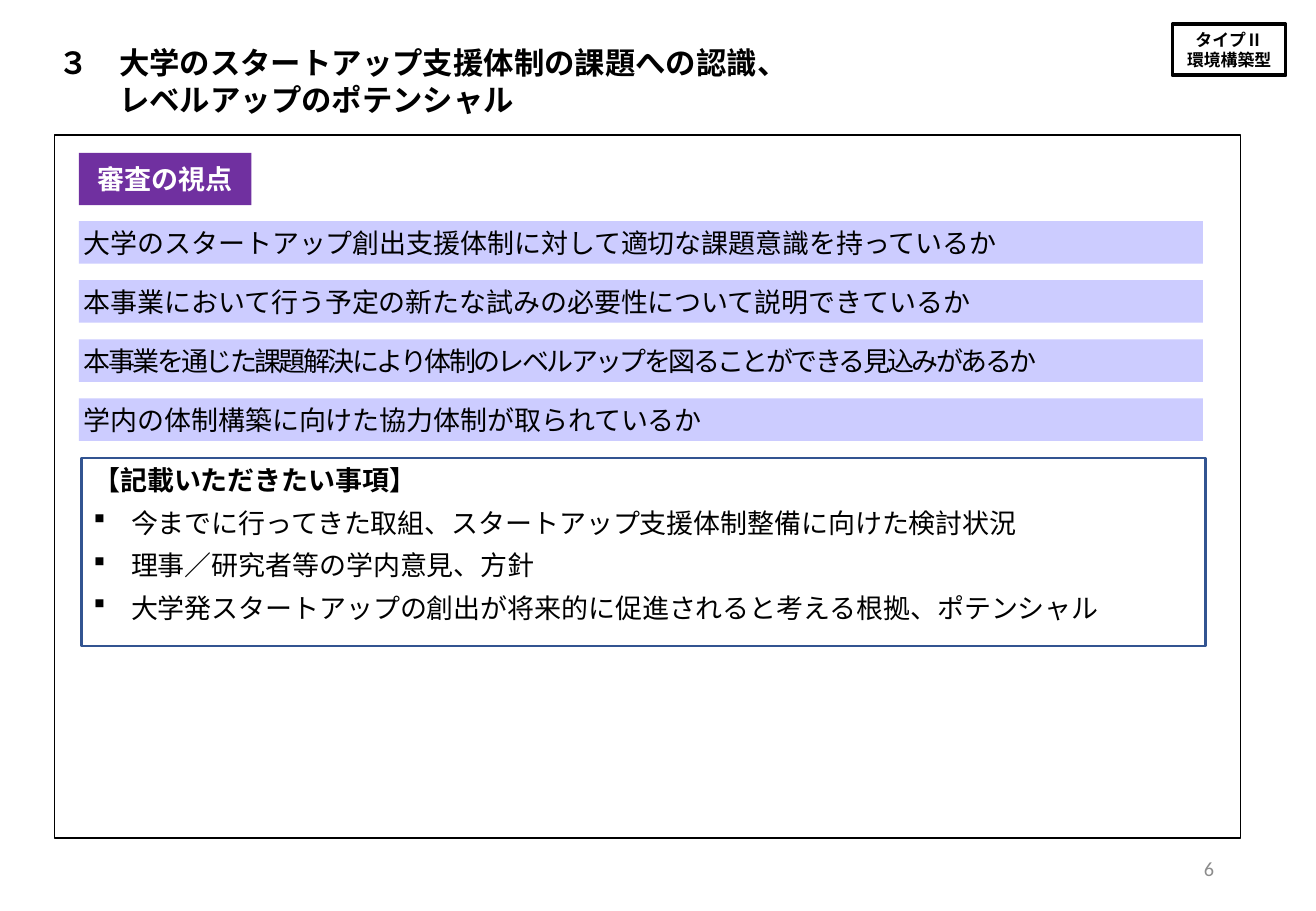
from lxml import etree
from pptx import Presentation, util as u
from pptx.dml.color import RGBColor
from pptx.enum import shapes, text
from pptx.oxml.ns import qn

BLACK = RGBColor(0, 0, 0)
WHITE = RGBColor(255, 255, 255)
PURPLE = RGBColor(0x70, 0x30, 0xA0)
LAVENDER = RGBColor(0xCC, 0xCC, 0xFF)
NAVY = RGBColor(0x32, 0x54, 0x91)
GRAY = RGBColor(0x8C, 0x8C, 0x8C)
LEFT, CENTER, RIGHT = text.PP_ALIGN.LEFT, text.PP_ALIGN.CENTER, text.PP_ALIGN.RIGHT
MIDDLE, TOP = text.MSO_ANCHOR.MIDDLE, text.MSO_ANCHOR.TOP


def add_rect(s, box, fill=None, line=None, width=1):
    sp = s.shapes.add_shape(shapes.MSO_SHAPE.RECTANGLE, *map(u.Inches, box))
    sp.shadow.inherit = False
    if fill is None:
        sp.fill.background()
    else:
        sp.fill.solid()
        sp.fill.fore_color.rgb = fill
    if line is None:
        sp.line.fill.background()
    else:
        sp.line.color.rgb = line
        sp.line.width = u.Pt(width)
    return sp


def add_textbox(s, box):
    return s.shapes.add_textbox(*map(u.Inches, box))


def set_frame(sp, anchor=MIDDLE, inset=0.04, side=None):
    tf = sp.text_frame
    tf.word_wrap = True
    tf.vertical_anchor = anchor
    tf.margin_top = tf.margin_bottom = u.Inches(inset)
    tf.margin_left = tf.margin_right = u.Inches(inset if side is None else side)
    return tf


def write(tf, words, size=16, font="Calibri", east="Calibri", color=BLACK, bold=False,
          align=LEFT, before=0, left=0, hang=0, bullet=None, spacing=None):
    p = tf.paragraphs[0]
    if p.runs:
        p = tf.add_paragraph()
    p.alignment = align
    p.space_before = u.Pt(before)
    pPr = p._p.get_or_add_pPr()
    pPr.set("marL", str(u.Inches(left)))
    pPr.set("indent", str(u.Inches(-hang)))
    if bullet:
        etree.SubElement(pPr, qn("a:buFont"), typeface="Wingdings")
        etree.SubElement(pPr, qn("a:buChar"), char=bullet)
    r = p.add_run()
    r.text = words
    r.font.size = u.Pt(size)
    r.font.bold = bold
    r.font.color.rgb = color
    r.font.name = font
    rPr = r._r.get_or_add_rPr()
    etree.SubElement(rPr, qn("a:ea"), typeface=east)
    if spacing:
        rPr.set("spc", str(int(spacing * 100)))


def type_tag(s, box):
    tf = set_frame(add_rect(s, box, line=BLACK, width=2.25))
    for words in ("タイプⅡ", "環境構築型"):
        write(tf, words, size=10, font="Arial", bold=True, align=CENTER)


def title(s, box):
    tf = set_frame(add_textbox(s, box))
    write(tf, "３　大学のスタートアップ支援体制の課題への認識、", size=18, bold=True)
    write(tf, "レベルアップのポテンシャル", size=18, bold=True, left=0.5)


def criteria(s, box):
    x, y, w, h = box
    tf = set_frame(add_rect(s, (x, y, 1.42, 0.43), PURPLE))
    write(tf, "審査の視点", font="Arial", color=WHITE, bold=True, align=CENTER)
    bar, first = 0.35, 0.56
    pitch = (h - first - bar) / 3
    bars = [
        ("大学のスタートアップ創出支援体制に対して適切な課題意識を持っているか",
         dict(font="Noto Sans CJK JP", east="Noto Sans CJK JP")),
        ("本事業において行う予定の新たな試みの必要性について説明できているか", {}),
        ("本事業を通じた課題解決により体制のレベルアップを図ることができる見込みがあるか",
         dict(spacing=-1.5)),
        ("学内の体制構築に向けた協力体制が取られているか", dict(font="Arial")),
    ]
    for i, (words, style) in enumerate(bars):
        sp = add_rect(s, (x, y + first + i * pitch, w, bar), LAVENDER)
        write(set_frame(sp), words, **style)


def entries(s, box):
    sp = add_rect(s, box, WHITE, NAVY, 1.5)
    tf = set_frame(sp, TOP, 0.05, 0.1)
    write(tf, "【記載いただきたい事項】", font="Arial", bold=True, before=12)
    for words in (
        "今までに行ってきた取組、スタートアップ支援体制整備に向けた検討状況",
        "理事／研究者等の学内意見、方針",
        "大学発スタートアップの創出が将来的に促進されると考える根拠、ポテンシャル",
    ):
        write(tf, words, font="Arial", before=6, left=0.31, hang=0.31, bullet="§")


def body(s, box):
    x, y, w, h = box
    add_rect(s, box, WHITE, BLACK)
    criteria(s, (x + 0.2, y + 0.15, 9.25, 2.37))
    entries(s, (x + 0.22, y + 2.66, 9.25, 1.55))


def page_number(s, box):
    tf = set_frame(add_textbox(s, box), inset=0.05, side=0.1)
    write(tf, "6", size=12, color=GRAY, align=RIGHT)


def main():
    prs = Presentation()
    prs.slide_width, prs.slide_height = u.Inches(10.83), u.Inches(7.5)
    s = prs.slides.add_slide(prs.slide_layouts[6])
    type_tag(s, (9.65, 0.2, 0.93, 0.42))
    title(s, (0.44, 0.32, 7.38, 0.69))
    body(s, (0.45, 1.11, 9.76, 5.79))
    page_number(s, (7.65, 6.95, 2.44, 0.4))
    prs.save("out.pptx")


if __name__ == "__main__":
    main()
